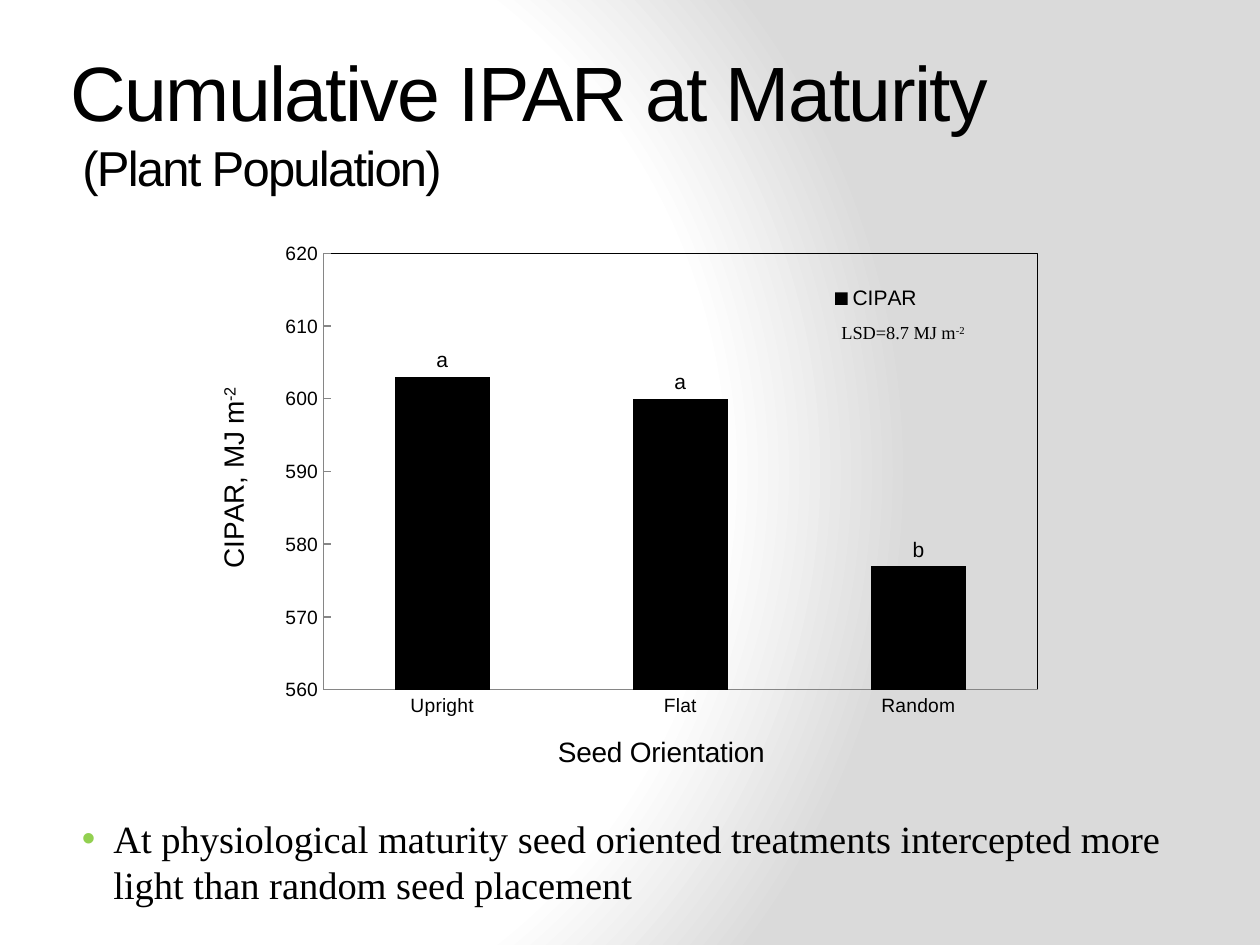
from lxml import etree
from pptx import Presentation
from pptx.chart.data import CategoryChartData
from pptx.dml.color import RGBColor
from pptx.enum.chart import (XL_CHART_TYPE as ChartType, XL_LABEL_POSITION as LabelPos,
                             XL_LEGEND_POSITION as LegendPos, XL_TICK_MARK as Tick)
from pptx.enum.text import MSO_ANCHOR as Anchor, MSO_AUTO_SIZE as AutoSize, PP_ALIGN as Align
from pptx.oxml import parse_xml
from pptx.oxml.ns import nsdecls, qn
from pptx.util import Inches, Pt


def color(hex_value):
    return RGBColor.from_string(hex_value)


class SlideBuilder:
    sans, serif = "Arial", "Times New Roman"
    ink, axis_gray, bullet_green = "000000", "868686", "92D050"

    def __init__(self, slide):
        self.slide = slide

    def style(self, font, size, name=None):
        formats = {"name": name or self.sans, "size": Pt(size), "bold": False}
        for key, value in formats.items():
            setattr(font, key, value)
        font.color.rgb = color(self.ink)

    def run(self, paragraph, text, size, name=None, **extra):
        run = paragraph.add_run()
        run.text = text
        self.style(run.font, size, name)
        for key, value in extra.items():
            run._r.get_or_add_rPr().set(key, str(value))

    def place(self, shape, left, top, width, height):
        box = {"left": left, "top": top, "width": width, "height": height}
        for key, value in box.items():
            setattr(shape, key, Inches(value))

    def background(self, stops, center):
        self.slide.background.fill.solid()
        bg = self.slide._element.find(".//" + qn("p:bgPr"))
        marks = "".join(f'<a:gs pos="{pos * 1000}"><a:srgbClr val="{tone}"/></a:gs>'
                        for pos, tone in stops)
        sides = " ".join(f'{side}="{part * 1000}"' for side, part in zip("ltrb", center))
        bg.replace(bg[0], parse_xml(
            f'<a:gradFill {nsdecls("a")} rotWithShape="1"><a:gsLst>{marks}</a:gsLst>'
            f'<a:path path="circle"><a:fillToRect {sides}/></a:path></a:gradFill>'))

    def title(self, heading, subheading, box):
        holder = self.slide.shapes.title
        self.place(holder, *box)
        frame = holder.text_frame
        frame.auto_size, frame.vertical_anchor = AutoSize.NONE, Anchor.MIDDLE
        line = frame.paragraphs[0]
        line.alignment = Align.LEFT
        self.run(line, heading, 44, spc=-100)
        line.add_line_break()
        self.run(line, subheading, 28, spc=-100)

    def bullets(self, items, box):
        holder = self.slide.placeholders[1]
        self.place(holder, *box)
        frame = holder.text_frame
        frame.auto_size = AutoSize.NONE
        for i, item in enumerate(items):
            line = frame.add_paragraph() if i else frame.paragraphs[0]
            props = line._p.get_or_add_pPr()
            props.set("marL", str(Inches(0.38)))
            props.set("indent", str(Inches(-0.25)))
            tint = etree.SubElement(props, qn("a:buClr"))
            etree.SubElement(tint, qn("a:srgbClr")).set("val", self.bullet_green)
            etree.SubElement(props, qn("a:buChar")).set("char", "•")
            self.run(line, item, 22, self.serif)

    def note(self, text, power, box):
        label = self.slide.shapes.add_textbox(*map(Inches, box))
        label.text_frame.word_wrap = True
        line = label.text_frame.paragraphs[0]
        self.run(line, text, 10.5, self.serif)
        self.run(line, power, 10.5, self.serif, baseline=30000)

    def layout(self, part, index, inner=False, **spot):
        """Fix a chart part at fractions of the chart's size."""
        for old in part.findall(qn("c:layout")):
            part.remove(old)
        target = '<c:layoutTarget val="inner"/>' if inner else ""
        modes = "".join(f'<c:{key}Mode val="edge"/>' for key in "xy")
        values = "".join(f'<c:{key} val="{value}"/>' for key, value in spot.items())
        part.insert(index, parse_xml(
            f'<c:layout {nsdecls("c")}><c:manualLayout>{target}{modes}{values}'
            '</c:manualLayout></c:layout>'))

    def axis(self, axis, title, power, tick, **spot):
        formats = {"has_major_gridlines": False, "major_tick_mark": tick,
                   "minor_tick_mark": Tick.NONE}
        for key, value in formats.items():
            setattr(axis, key, value)
        axis.format.line.color.rgb = color(self.axis_gray)
        self.style(axis.tick_labels.font, 11)
        line = axis.axis_title.text_frame.paragraphs[0]
        self.run(line, title, 16)
        if power:
            self.run(line, power, 16, baseline=30000)
        self.layout(axis.axis_title._element, 1, **spot)

    def column_chart(self, name, bars, box):
        data = CategoryChartData(number_format="0")
        data.categories = [category for category, _, _ in bars]
        data.add_series(name, [value for _, value, _ in bars])
        chart = self.slide.shapes.add_chart(
            ChartType.COLUMN_CLUSTERED, *map(Inches, box), data).chart
        chart.has_title = False
        self.style(chart.font, 11)

        # Columns and their significance letters
        plot = chart.plots[0]
        plot.gap_width, plot.vary_by_categories = 150, False
        series = plot.series[0]
        series.format.fill.solid()
        series.format.fill.fore_color.rgb = color(self.ink)
        for i, (_, _, letter) in enumerate(bars):
            label = series.points[i].data_label
            self.run(label.text_frame.paragraphs[0], letter, 12)
            label.position = LabelPos.OUTSIDE_END

        # Axes
        self.axis(chart.category_axis, "Seed Orientation", None, Tick.NONE, x=0.41, y=0.88)
        values = chart.value_axis
        self.axis(values, "CIPAR, MJ m", "-2", Tick.INSIDE, x=0.01, y=0.27)
        scale = {"minimum_scale": 560, "maximum_scale": 620, "major_unit": 10}
        for key, value in scale.items():
            setattr(values, key, value)
        values.tick_labels.number_format = "0"
        values.tick_labels.number_format_is_linked = False

        # Framed plot area with the legend inside it
        area = chart._chartSpace.find(".//" + qn("c:plotArea"))
        self.layout(area, 0, inner=True, x=0.14, y=0.04, w=0.84, h=0.77)
        area.append(parse_xml(
            f'<c:spPr {nsdecls("c", "a")}><a:noFill/><a:ln w="9525"><a:solidFill>'
            f'<a:srgbClr val="{self.ink}"/></a:solidFill></a:ln></c:spPr>'))
        chart.has_legend = True
        legend = chart.legend
        legend.position, legend.include_in_layout = LegendPos.RIGHT, True
        self.style(legend.font, 12)
        self.layout(legend._element, 1, x=0.73, y=0.08, w=0.12, h=0.08)


def main():
    deck = Presentation()
    deck.slide_width, deck.slide_height = Inches(10), Inches(7.5)
    page = SlideBuilder(deck.slides.add_slide(deck.slide_layouts[1]))

    page.background([(0, "FFFFFF"), (75, "FFFFFF"), (100, "DADADA")], (20, 50, 100, 50))
    page.title("Cumulative IPAR at Maturity", " (Plant Population)", (0.46, 0.33, 9.08, 1.25))
    page.bullets(["At physiological maturity seed oriented treatments intercepted more "
                  "light than random seed placement"], (0.42, 6.42, 9.17, 1.08))
    page.column_chart("CIPAR", [("Upright", 603, "a"), ("Flat", 600, "a"),
                                ("Random", 577, "b")], (1.62, 1.83, 6.75, 4.5))
    page.note("LSD=8.7 MJ m", "-2", (6.58, 2.5, 1.25, 0.29))

    deck.save("out.pptx")


if __name__ == "__main__":
    main()
